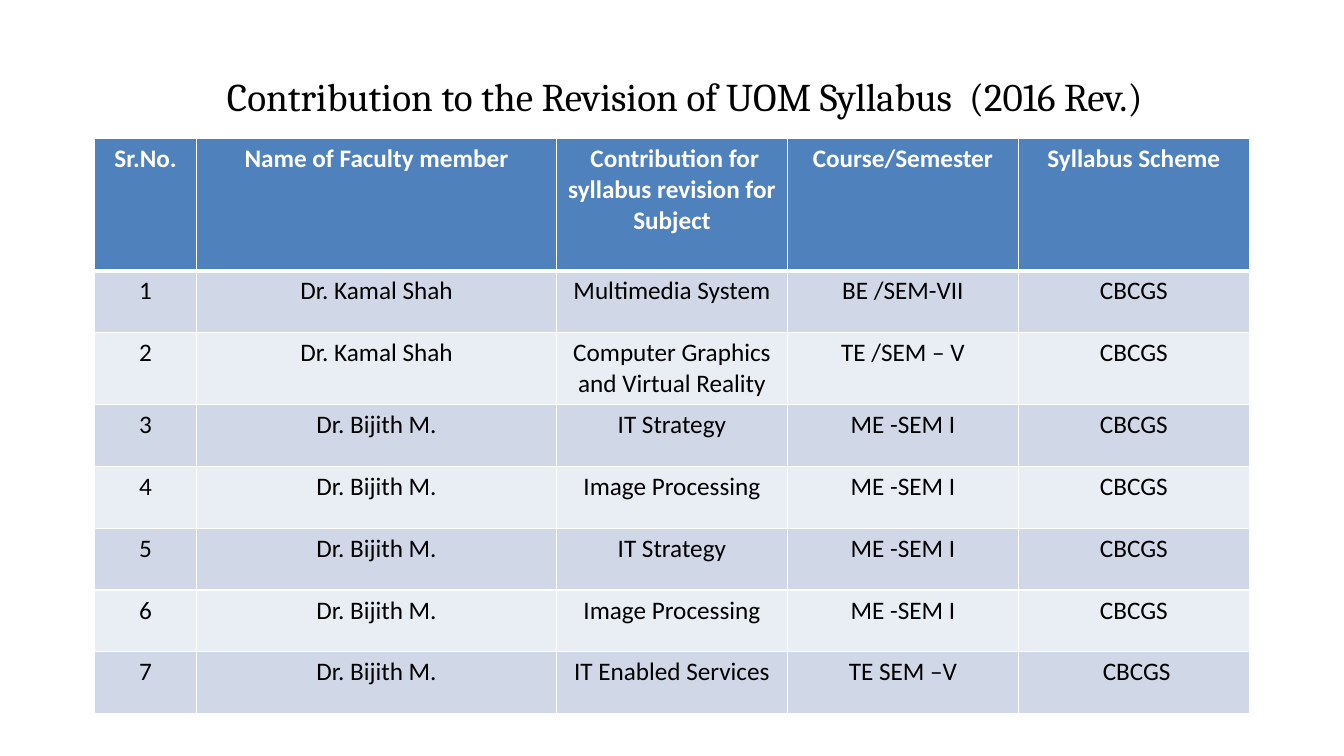
from lxml import etree
from pptx import Presentation
from pptx.dml.color import RGBColor
from pptx.enum import text
from pptx.oxml import ns
from pptx.util import Pt

COLORS = {
    "header": "4F81BD",
    "odd": "D0D8E8",
    "even": "E9EDF4",
    "border": "FFFFFF",
    "header_text": "FFFFFF",
    "body_text": "000000",
}


def format_text(paragraph, color, **font_values):
    paragraph.alignment = text.PP_ALIGN.CENTER
    for name, value in font_values.items():
        setattr(paragraph.font, name, value)
    paragraph.font.color.rgb = RGBColor.from_string(color)


def add_border(cell, side, width):
    line = etree.SubElement(cell._tc.get_or_add_tcPr(), ns.qn("a:ln" + side), w=str(Pt(width)))
    fill = etree.SubElement(line, ns.qn("a:solidFill"))
    etree.SubElement(fill, ns.qn("a:srgbClr"), val=COLORS["border"])


presentation = Presentation()
presentation.slide_width, presentation.slide_height = Pt(960), Pt(540)
slide = presentation.slides.add_slide(presentation.slide_layouts[5])

# Title
title = slide.shapes.title
title_place = {"left": 75, "top": 32.5, "width": 828, "height": 72}
for side, length in title_place.items():
    setattr(title, side, Pt(length))
title.text_frame.text = "Contribution to the Revision of UOM Syllabus  (2016 Rev.)"
title.text_frame.vertical_anchor = text.MSO_ANCHOR.MIDDLE
format_text(title.text_frame.paragraphs[0], COLORS["body_text"], name="Cambria", size=Pt(28))

# Syllabus contributions
headings = ["Sr.No.", "Name of Faculty member", " Contribution for syllabus revision for Subject",
            "Course/Semester", "Syllabus Scheme"]
contributions = [
    ("Dr. Kamal Shah", "Multimedia System", "BE /SEM-VII", "CBCGS"),
    ("Dr. Kamal Shah", "Computer Graphics and Virtual Reality", "TE /SEM – V", "CBCGS"),
    ("Dr. Bijith M.", "IT Strategy", "ME -SEM I", "CBCGS"),
    ("Dr. Bijith M.", "Image Processing", "ME -SEM I", "CBCGS"),
    ("Dr. Bijith M.", "IT Strategy", "ME -SEM I", "CBCGS"),
    ("Dr. Bijith M.", "Image Processing", "ME -SEM I", "CBCGS"),
    ("Dr. Bijith M.", "IT Enabled Services", "TE SEM –V", " CBCGS"),
]
rows = [headings] + [(str(number), *entry) for number, entry in enumerate(contributions, 1)]

column_widths = [73, 257, 165, 165, 165]
row_heights = [94.5, 44.2, 50.5] + [44.2] * 5
contribution_table = slide.shapes.add_table(
    len(rows), len(headings), Pt(67.5), Pt(99),
    Pt(sum(column_widths)), Pt(sum(row_heights))).table
for column, width in zip(contribution_table.columns, column_widths):
    column.width = Pt(width)

# Cells: header row, then alternating bands
for row_index, (entry, height) in enumerate(zip(rows, row_heights)):
    contribution_table.rows[row_index].height = Pt(height)
    is_header = row_index == 0
    band = "header" if is_header else "odd" if row_index % 2 else "even"
    text_color = COLORS["header_text" if is_header else "body_text"]
    border_widths = {"L": 1, "R": 1, "T": 3 if row_index == 1 else 1, "B": 3 if is_header else 1}
    for column_index, wording in enumerate(entry):
        cell = contribution_table.cell(row_index, column_index)
        cell.text = wording
        format_text(cell.text_frame.paragraphs[0], text_color,
                    name="Calibri", size=Pt(18), bold=is_header)
        for side, width in border_widths.items():
            add_border(cell, side, width)
        cell.fill.solid()
        cell.fill.fore_color.rgb = RGBColor.from_string(COLORS[band])

presentation.save("out.pptx")
